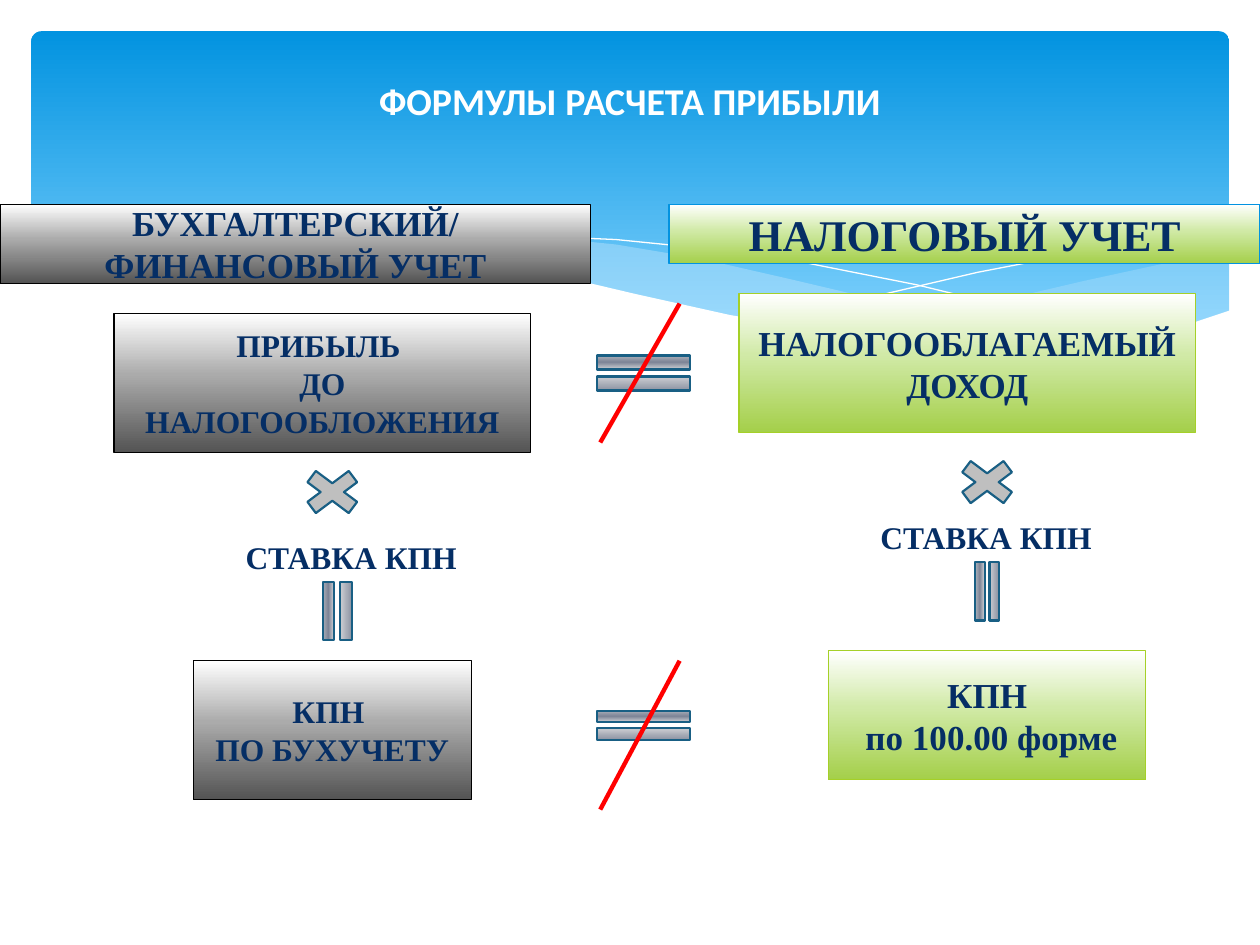
from lxml.etree import SubElement
from pptx import Presentation
from pptx.dml.color import RGBColor
from pptx.enum.shapes import MSO_CONNECTOR as CONN, MSO_SHAPE as SHAPE
from pptx.enum.text import MSO_ANCHOR as ANCHOR, MSO_AUTO_SIZE as FIT, PP_ALIGN as ALIGN
from pptx.oxml.ns import qn
from pptx.util import Cm, Pt

SERIF = "Times New Roman"
NAVY, STEEL, RED, WHITE = "052E65", "195F84", "FF0000", "FFFFFF"
GREY = [(0, WHITE), (44, "ABABAB"), (100, "545454")]
GREEN = [(0, WHITE), (44, "D1EAA7"), (100, "A4CF4A")]
SKY = [(0, "0293E0"), (90, "83D3FE")]
METAL = [(0, WHITE), (7, "E6E6E6"), (32, "7D8496"), (47, "E6E6E6"),
         (85, "7D8496"), (100, "E6E6E6")]

RIGHT_WAVE = [(24.77, 5.08), (23.39, 5.33), (21.87, 5.66), (19.13, 6.3), (16.79, 6.73),
              (18.26, 6.91), (19.84, 7.04), (21.69, 7.01), (23.19, 6.78), (24.79, 6.27),
              (24.79, 5.08)]
LEFT_WAVE = [(22.68, 6.93), (20.5, 6.6), (17.93, 6.1), (15.98, 5.64), (14.1, 5.21),
             (12.42, 4.93), (10.67, 4.75), (9.17, 4.7), (7.26, 4.85), (9.19, 5.16),
             (11.4, 5.64), (13.46, 6.1), (15.27, 6.48), (17.27, 6.81), (19.33, 7.04),
             (21.03, 7.06)]
FALLING_LINE = [(7.85, 4.95), (8.97, 4.8), (10.57, 4.75), (12.42, 4.83), (14.12, 5),
                (16.15, 5.28), (18.47, 5.74), (21.11, 6.38), (23.04, 6.91)]
RISING_LINE = [(15.57, 6.53), (17.65, 5.97), (19.71, 5.49), (22, 5.05), (23.47, 4.83),
               (24.77, 4.7)]
LOWER_EDGE = [(24.82, 6.25), (23.62, 6.65), (22.23, 6.93), (20.55, 7.04), (18.9, 6.96),
              (16.97, 6.73), (14.71, 6.35), (12.78, 5.92), (10.62, 5.41), (8.64, 5),
              (6.88, 4.78), (4.9, 4.67), (3.02, 4.75), (1.7, 5), (0.58, 5.41),
              (0.58, 8.36), (24.82, 8.36)]


def rgb(color):
    return RGBColor.from_string(color)


def paint(sp, fill=None, line=None, width=0.75, alpha=None):
    sp.shadow.inherit = False
    if fill is None:
        sp.fill.background()
    elif isinstance(fill, str):
        sp.fill.solid()
        sp.fill.fore_color.rgb = rgb(fill)
        if alpha:
            clr = sp._element.spPr.find(qn("a:solidFill"))[0]
            SubElement(clr, qn("a:alpha"), val=str(alpha * 1000))
    else:
        sp.fill.gradient()
        sp.fill.gradient_angle = 270
        stops = sp._element.spPr.find(qn("a:gradFill")).find(qn("a:gsLst"))
        for old in list(stops):
            stops.remove(old)
        for pos, color in fill:
            gs = SubElement(stops, qn("a:gs"), pos=str(pos * 1000))
            SubElement(gs, qn("a:srgbClr"), val=color)
    if line:
        sp.line.color.rgb = rgb(line)
        sp.line.width = Pt(width)
    else:
        sp.line.fill.background()


def add_text(tf, lines, size, color=NAVY, font=SERIF, align=ALIGN.CENTER):
    for i, text in enumerate(lines):
        p = tf.paragraphs[0] if i == 0 else tf.add_paragraph()
        p.alignment = align
        r = p.add_run()
        r.text = text
        r.font.size = Pt(size)
        r.font.name = font
        r.font.bold = True
        r.font.color.rgb = rgb(color)


def add_preset(s, kind, x, y, w, h, fill, line=None, width=0.75, rotation=0):
    sp = s.shapes.add_shape(kind, Cm(x), Cm(y), Cm(w), Cm(h))
    paint(sp, fill, line, width)
    sp.rotation = rotation
    return sp


def add_box(s, x, y, w, h, fill, line, lines, size):
    sp = add_preset(s, SHAPE.RECTANGLE, x, y, w, h, fill, line)
    tf = sp.text_frame
    tf.word_wrap = True
    tf.vertical_anchor = ANCHOR.MIDDLE
    add_text(tf, lines, size)


def add_outline(s, points, fill=None, line=None, alpha=None):
    pts = [(round(x * 100), round(y * 100)) for x, y in points]
    fb = s.shapes.build_freeform(*pts[0], scale=Cm(0.01))
    fb.add_line_segments(pts[1:], close=fill is not None)
    paint(fb.convert_to_shape(), fill, line, 0, alpha)


def add_label(s, x, y, text):
    tf = s.shapes.add_textbox(Cm(x), Cm(y), Cm(4.8), Cm(1.02)).text_frame
    tf.word_wrap = False
    tf.auto_size = FIT.SHAPE_TO_FIT_TEXT
    add_text(tf, [text], 18, align=ALIGN.LEFT)


def add_title(s, text):
    tf = s.shapes.add_textbox(Cm(1.27), Cm(1.52), Cm(22.86), Cm(1)).text_frame
    tf.word_wrap = True
    tf.vertical_anchor = ANCHOR.MIDDLE
    add_text(tf, [text], 21.6, WHITE, "Calibri")


def add_equal(s, x, y, w, h, rotation=0):
    add_preset(s, SHAPE.MATH_EQUAL, x, y, w, h, METAL, STEEL, 1.25, rotation)


def add_strike(s, top, bottom):
    cn = s.shapes.add_connector(CONN.STRAIGHT, Cm(13.7), Cm(top), Cm(12.1), Cm(bottom))
    cn.line.color.rgb = rgb(RED)
    cn.line.width = Pt(2.5)
    SubElement(cn._element.spPr, qn("a:effectLst"))


def add_backdrop(s):
    panel = add_preset(s, SHAPE.ROUNDED_RECTANGLE, 0.63, 0.63, 24.15, 6.86, SKY)
    panel.adjustments[0] = 0.03
    add_outline(s, RIGHT_WAVE, "C6E7FC", alpha=29)
    add_outline(s, LEFT_WAVE, "C6E7FC", alpha=40)
    add_outline(s, FALLING_LINE, line=WHITE)
    add_outline(s, RISING_LINE, line=WHITE)
    add_outline(s, LOWER_EDGE, WHITE)


def main():
    prs = Presentation()
    prs.slide_width, prs.slide_height = Cm(25.4), Cm(19.05)
    s = prs.slides.add_slide(prs.slide_layouts[6])
    add_backdrop(s)
    add_title(s, "ФОРМУЛЫ РАСЧЕТА ПРИБЫЛИ")

    black, lime = "000000", "A5D028"
    for box in [
        (0, 4.12, 11.91, 1.59, GREY, black, ["БУХГАЛТЕРСКИЙ/", "ФИНАНСОВЫЙ УЧЕТ"], 20),
        (13.49, 4.12, 11.91, 1.2, GREEN, "0293E0", ["НАЛОГОВЫЙ УЧЕТ"], 25),
        (2.3, 6.32, 8.4, 2.8, GREY, black, ["ПРИБЫЛЬ ", "ДО НАЛОГООБЛОЖЕНИЯ"], 18),
        (14.9, 5.92, 9.2, 2.8, GREEN, lime, ["НАЛОГООБЛАГАЕМЫЙ ДОХОД"], 20),
        (3.9, 13.32, 5.6, 2.8, GREY, black, ["КПН ", "ПО БУХУЧЕТУ"], 18),
        (16.7, 13.12, 6.4, 2.6, GREEN, lime, ["КПН", " по 100.00 форме"], 20),
    ]:
        add_box(s, *box)

    for x, y in [(5.9, 9.32), (19.1, 9.12)]:
        add_preset(s, SHAPE.MATH_MULTIPLY, x, y, 1.6, 1.2, "BFBFBF", STEEL, 1.25)
    for x, y in [(4.7, 10.72), (17.5, 10.32)]:
        add_label(s, x, y, "СТАВКА КПН")

    add_equal(s, 6, 11.82, 1.6, 1, 270)
    add_equal(s, 19.1, 11.52, 1.6, 0.8, 270)
    for y, h, top, bottom in [(6.92, 1.2, 6.12, 8.92), (14.12, 1, 13.32, 16.32)]:
        add_equal(s, 11.7, y, 2.54, h)
        add_strike(s, top, bottom)
    prs.save("out.pptx")


if __name__ == "__main__":
    main()
